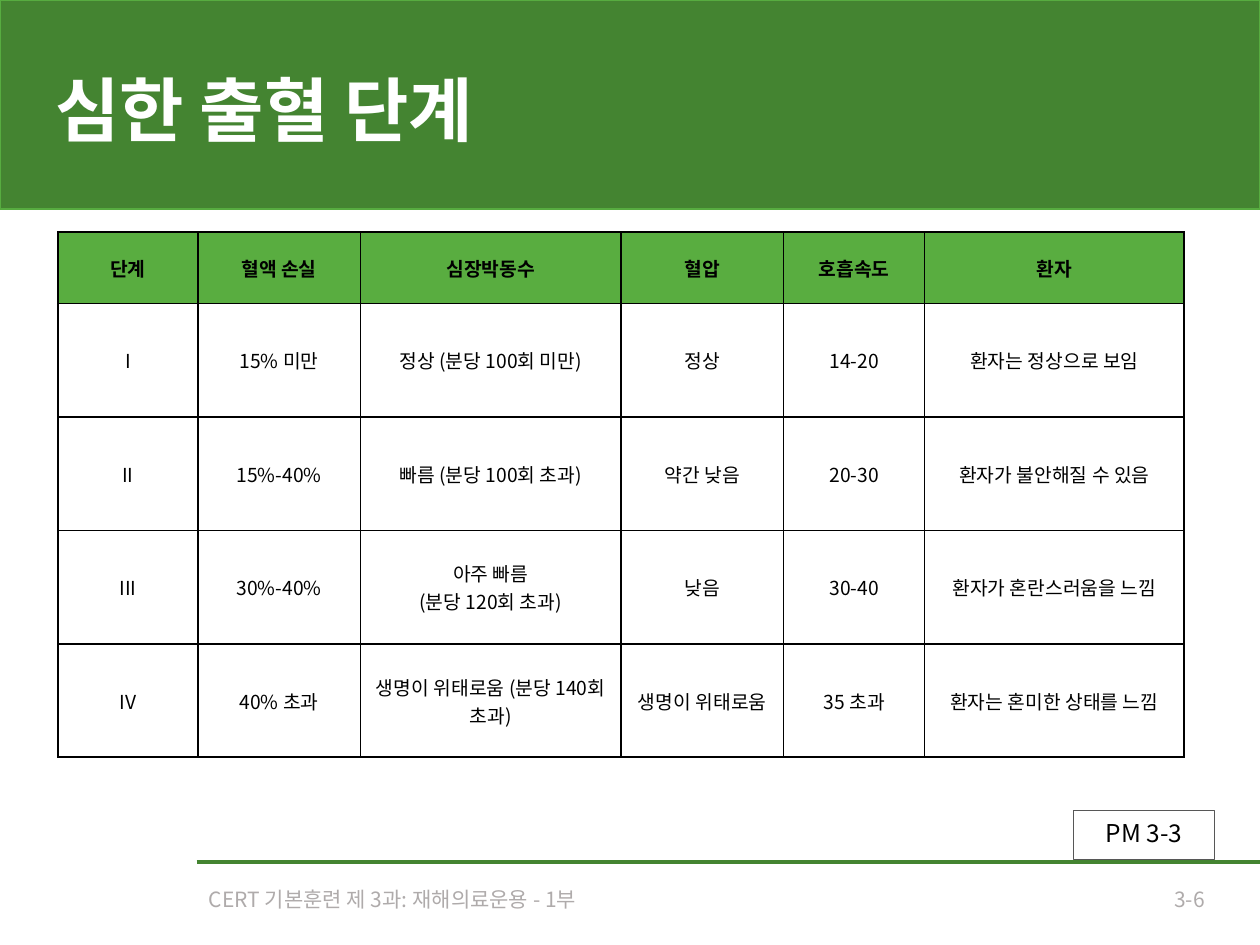
"""Build the slide on the stages of severe bleeding."""
from lxml import etree
from pptx import Presentation, util as u
from pptx.dml.color import RGBColor
from pptx.enum import shapes, text
from pptx.oxml import ns

FONT = "Noto Sans CJK KR"
COLORS = {"band": "448431", "band_edge": "57AC40", "header": "59AD40", "white": "FFFFFF",
          "black": "000000", "footer": "AFABAB", "frame": "575757"}
COLORS = {name: RGBColor.from_string(value) for name, value in COLORS.items()}
ALIGN = text.PP_ALIGN


def write(frame, wording, size, color, align=ALIGN.LEFT, bold=False, line_spacing=1.0):
    """Fill a text frame with one paragraph for each line of wording."""
    frame.word_wrap = True
    frame.vertical_anchor = text.MSO_ANCHOR.MIDDLE
    for index, line in enumerate(wording.split("\n")):
        para = frame.add_paragraph() if index else frame.paragraphs[0]
        para.alignment = align
        para.line_spacing = line_spacing
        span = para.add_run()
        span.text = line
        span.font.color.rgb = COLORS[color]
        for name, value in {"name": FONT, "size": u.Pt(size), "bold": bold}.items():
            setattr(span.font, name, value)
        etree.SubElement(span.font._element, ns.qn("a:ea"), typeface=FONT)


def add_borders(cell):
    """Draw a thin black line on each side of a table cell."""
    properties = cell._tc.get_or_add_tcPr()
    for side in ("lnL", "lnR", "lnT", "lnB"):
        line = etree.SubElement(properties, ns.qn(f"a:{side}"), w=str(u.Pt(1)))
        fill = etree.SubElement(line, ns.qn("a:solidFill"))
        etree.SubElement(fill, ns.qn("a:srgbClr"), val=str(COLORS["black"]))


deck = Presentation()
deck.slide_width, deck.slide_height = u.Inches(10), u.Inches(7.5)
page = deck.slides.add_slide(deck.slide_layouts[5])

band = page.shapes.add_shape(shapes.MSO_SHAPE.RECTANGLE, 0, 0, deck.slide_width, u.Inches(1.66))
band.shadow.inherit = False
band.fill.solid()
band.fill.fore_color.rgb = COLORS["band"]
band.line.color.rgb = COLORS["band_edge"]
band.line.width = u.Pt(1)
page.shapes._spTree.insert(2, band._element)

title = page.shapes.title
for name, value in {"left": 0.34, "top": 0.35, "width": 6.35, "height": 1.11}.items():
    setattr(title, name, u.Inches(value))
title.text_frame.auto_size = text.MSO_AUTO_SIZE.NONE
write(title.text_frame, "심한 출혈 단계", 40, "white", bold=True, line_spacing=0.9)

rule = page.shapes.add_connector(shapes.MSO_CONNECTOR.STRAIGHT, u.Inches(1.56), u.Inches(6.84),
                                 deck.slide_width, u.Inches(6.84))
rule.line.color.rgb = COLORS["band"]
rule.line.width = u.Pt(2.04)
etree.SubElement(rule._element.spPr, ns.qn("a:effectLst"))

labels = [
    ("CERT 기본훈련 제 3과: 재해의료운용 - 1부", (1.56, 6.98, 5.04, 0.33), 12, "footer", ALIGN.LEFT),
    ("3-6", (7.69, 6.98, 1.97, 0.33), 12, "footer", ALIGN.RIGHT),
    ("PM 3-3", (8.52, 6.43, 1.12, 0.39), 14, "black", ALIGN.CENTER),
]
for wording, place, size, color, align in labels:
    box = page.shapes.add_textbox(*map(u.Inches, place))
    write(box.text_frame, wording, size, color, align, line_spacing=0.9)
box.line.color.rgb = COLORS["frame"]
box.line.width = u.Pt(0.75)

rows = [
    ("단계", "혈액 손실", "심장박동수", "혈압", "호흡속도", "환자"),
    ("I", "15% 미만", "정상 (분당 100회 미만)", "정상", "14-20", "환자는 정상으로 보임"),
    ("II", "15%-40%", "빠름 (분당 100회 초과)", "약간 낮음", "20-30", "환자가 불안해질 수 있음"),
    ("III", "30%-40%", "아주 빠름\n(분당 120회 초과)", "낮음", "30-40", "환자가 혼란스러움을 느낌"),
    ("IV", "40% 초과", "생명이 위태로움 (분당 140회 초과)", "생명이 위태로움", "35 초과",
     "환자는 혼미한 상태를 느낌"),
]
widths = (1.11, 1.29, 2.07, 1.29, 1.12, 2.06)
table = page.shapes.add_table(len(rows), len(widths), u.Inches(0.46), u.Inches(1.84),
                              u.Inches(sum(widths)), u.Inches(4.17)).table
for column, width in zip(table.columns, widths):
    column.width = u.Inches(width)
margins = {"margin_left": 0.04, "margin_right": 0.04, "margin_top": 0, "margin_bottom": 0}
for row_index, row in enumerate(rows):
    is_header = row_index == 0
    table.rows[row_index].height = u.Inches(0.57 if is_header else 0.9)
    for column_index, wording in enumerate(row):
        cell = table.cell(row_index, column_index)
        for name, value in margins.items():
            setattr(cell, name, u.Inches(value))
        cell.vertical_anchor = text.MSO_ANCHOR.MIDDLE
        add_borders(cell)
        cell.fill.solid()
        cell.fill.fore_color.rgb = COLORS["header" if is_header else "white"]
        write(cell.text_frame, wording, 11, "black", ALIGN.CENTER, is_header)

deck.save("out.pptx")
